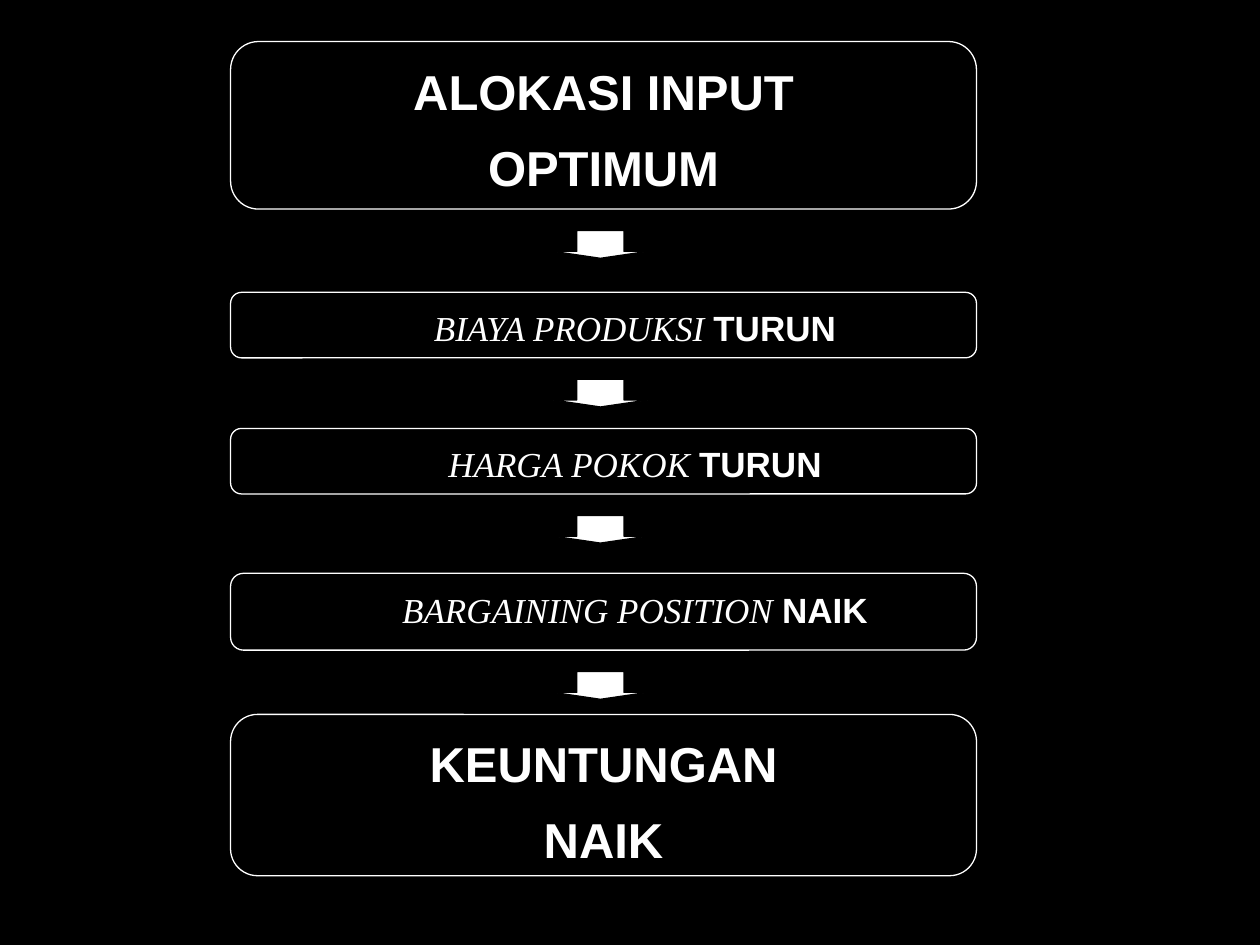
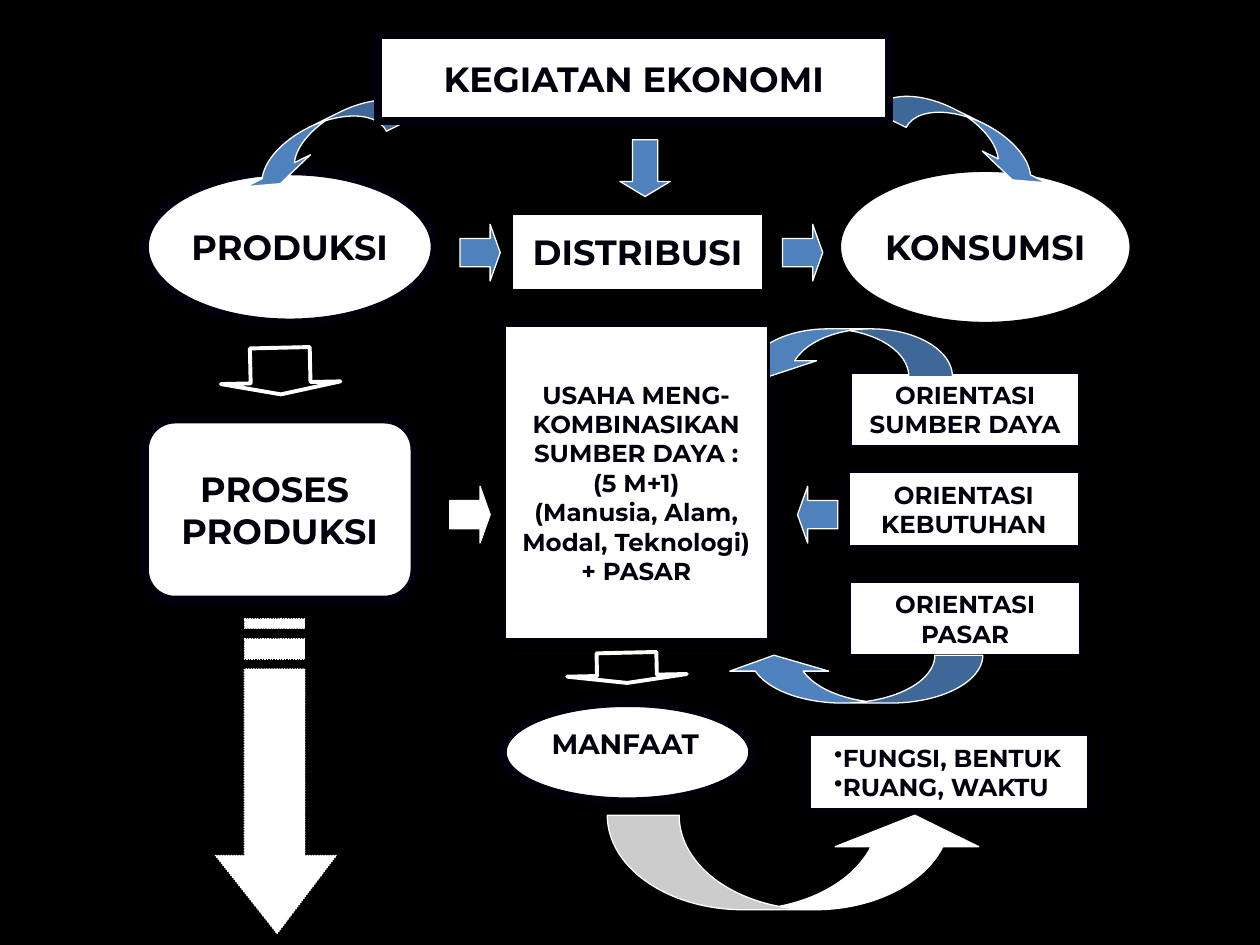
from lxml.etree import SubElement
from pptx import Presentation
from pptx.dml.color import RGBColor
from pptx.enum.dml import MSO_LINE
from pptx.enum.shapes import MSO_SHAPE
from pptx.enum.text import MSO_ANCHOR, PP_ALIGN
from pptx.oxml.ns import qn
from pptx.util import Inches, Pt

BLACK = "000000"
WHITE = "FFFFFF"
INK = "00000C"
BLUE = "4F81BD"
HEADING_FONT = "Montserrat"
BLOCK_HEAD = (0.5, 0.25)


def color(value):
    return RGBColor.from_string(value)


def add_slide(prs):
    s = prs.slides.add_slide(prs.slide_layouts[6])
    s.background.fill.solid()
    s.background.fill.fore_color.rgb = color(BLACK)
    return s


def paint(sp, fill, line, width):
    sp.shadow.inherit = False
    if fill:
        sp.fill.solid()
        sp.fill.fore_color.rgb = color(fill)
    else:
        sp.fill.background()
    sp.line.color.rgb = color(line)
    sp.line.width = Pt(width)


def add_shape(s, kind, box, fill=WHITE, line=WHITE, width=0.75,
              adj=(), rotation=0, flip=False):
    sp = s.shapes.add_shape(kind, *(Inches(v) for v in box))
    paint(sp, fill, line, width)
    for i, value in enumerate(adj):
        sp.adjustments[i] = value
    sp.rotation = rotation
    if flip:
        sp.element.spPr.xfrm.set("flipH", "1")
    return sp


def add_run(p, text, size, font, ink, bold=True, italic=False):
    r = p.add_run()
    r.text = text
    r.font.size = Pt(size)
    r.font.name = font
    r.font.bold = bold
    r.font.italic = italic
    r.font.color.rgb = color(ink)


def paragraphs(tf, count):
    return [tf.paragraphs[0]] + [tf.add_paragraph() for _ in range(count - 1)]


def add_node(s, kind, box, lines, size=14, width=2.25, wrap=True,
             align=PP_ALIGN.CENTER):
    sp = add_shape(s, kind, box, WHITE, INK, width)
    tf = sp.text_frame
    tf.word_wrap = wrap
    tf.vertical_anchor = MSO_ANCHOR.MIDDLE
    for p, line in zip(paragraphs(tf, len(lines)), lines):
        p.alignment = align
        for i, part in enumerate(line.split("\n")):
            if i:
                p.add_line_break()
            add_run(p, part, size, HEADING_FONT, INK)
    return tf


def add_step(s, box):
    sp = add_shape(s, MSO_SHAPE.ROUNDED_RECTANGLE, box, BLACK, WHITE)
    tf = sp.text_frame
    tf.word_wrap = True
    tf.vertical_anchor = MSO_ANCHOR.TOP
    tf.margin_top = Inches(0.09)
    return tf


def add_goal(s, box, lines):
    tf = add_step(s, box)
    for p, line in zip(paragraphs(tf, len(lines)), lines):
        p.alignment = PP_ALIGN.CENTER
        p.space_after = Pt(10)
        add_run(p, line, 28, "Arial", WHITE)


def add_effect(s, box, subject, change):
    p = add_step(s, box).paragraphs[0]
    p.alignment = PP_ALIGN.CENTER
    p.level = 1
    p.space_after = Pt(6)
    pPr = p._p.get_or_add_pPr()
    pPr.set("marL", str(Inches(0.5)))
    pPr.set("indent", "0")
    add_run(p, subject + " ", 20, "Times New Roman", WHITE, False, True)
    add_run(p, change, 20, "Arial", WHITE)


def draw_profit_chain(s, x, y, w):
    add_goal(s, (x, y, w, 1.33), ["ALOKASI INPUT", "OPTIMUM"])
    effects = [
        (1.99, 0.52, "BIAYA PRODUKSI", "TURUN"),
        (3.07, 0.52, "HARGA POKOK", "TURUN"),
        (4.22, 0.61, "BARGAINING POSITION", "NAIK"),
    ]
    bottoms = [1.33]
    for dy, h, subject, change in effects:
        add_effect(s, (x, y + dy, w, h), subject, change)
        bottoms.append(dy + h)
    add_goal(s, (x, y + 5.34, w, 1.28), ["KEUNTUNGAN", "NAIK"])
    for bottom in bottoms:
        add_shape(s, MSO_SHAPE.DOWN_ARROW,
                  (x + 2.56, y + bottom + 0.17, 0.75, 0.22),
                  WHITE, BLACK, adj=BLOCK_HEAD)


def draw_activities(s, x, y):
    for dx, width, label in [(0, 4.5, "PRODUKSI"), (5.52, 0.75, "KONSUMSI")]:
        add_node(s, MSO_SHAPE.OVAL, (x + dx, y, 2.3, 1.2), [label],
                 20, width, False)
    add_node(s, MSO_SHAPE.RECTANGLE, (x + 2.92, y + 0.34, 1.98, 0.6),
             ["DISTRIBUSI"], 20, 0.75, False)
    for dx in (2.5, 5.06):
        add_shape(s, MSO_SHAPE.RIGHT_ARROW, (x + dx, y + 0.42, 0.32, 0.45),
                  BLUE, adj=BLOCK_HEAD)


def draw_header(s, x, y, w):
    for dx, dy, rotation, flip in [(4.53, 0.05, 296.3, False),
                                   (-0.57, 0.08, 63.7, True)]:
        add_shape(s, MSO_SHAPE.CURVED_LEFT_ARROW,
                  (x + dx, y + dy, 0.3, 1.51), BLUE,
                  adj=(0.95, 1.9, 0.333), rotation=rotation, flip=flip)
    add_shape(s, MSO_SHAPE.DOWN_ARROW, (x + 1.92, y + 0.83, 0.4, 0.45),
              BLUE, adj=(0.5, 0.3))
    add_node(s, MSO_SHAPE.RECTANGLE, (x, y, w, 0.68), ["KEGIATAN EKONOMI"],
             20, 4.5, False)


def add_outline_arrow(s, x, y, h):
    add_shape(s, MSO_SHAPE.DOWN_ARROW, (x, y, 0.95, h), None, WHITE, 2.25,
              BLOCK_HEAD, 358.7)


def add_striped_arrow(s, x, y):
    left, right = 0.23, 0.71
    contours = [
        [(0.96, 1.88), (right, 1.88), (right, 0.4), (left, 0.4),
         (left, 1.88), (0, 1.88), (0.49, 2.5)],
        [(right, 0.16), (left, 0.16), (left, 0.32), (right, 0.32)],
        [(right, 0), (left, 0), (left, 0.08), (right, 0.08)],
    ]
    contours = [[(Inches(x + dx), Inches(y + dy)) for dx, dy in points]
                for points in contours]
    builder = s.shapes.build_freeform(*contours[0][0])
    for i, points in enumerate(contours):
        if i:
            builder.move_to(*points[0])
        builder.add_line_segments(points[1:], close=True)
    sp = builder.convert_to_shape()
    paint(sp, WHITE, WHITE, 0.75)
    sp.line.dash_style = MSO_LINE.ROUND_DOT


def draw_production(s, x, y):
    add_outline_arrow(s, x + 0.6, y, 0.37)
    add_node(s, MSO_SHAPE.ROUNDED_RECTANGLE, (x, y + 0.57, 2.14, 1.43),
             ["PROSES ", "PRODUKSI"], 20, 4.5, False)
    add_striped_arrow(s, x + 0.56, y + 2.15)


def draw_orientations(s, x, y):
    boxes = [(0.02, 0, 1.82, "SUMBER DAYA"), (0, 0.79, 1.84, "KEBUTUHAN"),
             (0.01, 1.66, 1.84, "PASAR")]
    for dx, dy, w, topic in boxes:
        add_node(s, MSO_SHAPE.RECTANGLE, (x + dx, y + dy, w, 0.6),
                 ["ORIENTASI " + topic])
    curves = [(MSO_SHAPE.CURVED_DOWN_ARROW, -0.34, 1.81, 0.913, 1.827),
              (MSO_SHAPE.CURVED_UP_ARROW, 2.25, 2.05, 1.033, 2.067)]
    for kind, dy, w, thickness, head in curves:
        add_shape(s, kind, (x - 0.98, y + dy, w, 0.38), BLUE,
                  adj=(thickness, head, 0.333), flip=True)
    add_shape(s, MSO_SHAPE.RIGHT_ARROW, (x - 0.4, y + 0.91, 0.32, 0.45),
              BLUE, adj=BLOCK_HEAD, flip=True)


def draw_resources(s, x, y, w, h):
    add_shape(s, MSO_SHAPE.RIGHT_ARROW, (x - 0.43, y + 1.28, 0.32, 0.45),
              adj=BLOCK_HEAD)
    add_node(s, MSO_SHAPE.RECTANGLE, (x, y, w, h),
             ["USAHA MENG-KOMBINASIKAN SUMBER DAYA :\n(5 M+1)",
              "(Manusia, Alam, Modal, Teknologi)", "+ PASAR"])
    add_outline_arrow(s, x + 0.5, y + h + 0.1, 0.24)


def draw_benefits(s, x, y):
    tf = add_node(s, MSO_SHAPE.OVAL, (x, y, 1.98, 0.78), ["MANFAAT"],
                  16, 4.5, align=PP_ALIGN.LEFT)
    tf.vertical_anchor = MSO_ANCHOR.BOTTOM
    tf.margin_top = Inches(0.2)
    tf.margin_bottom = Inches(0.21)
    tf = add_node(s, MSO_SHAPE.RECTANGLE, (x + 2.43, y + 0.25, 2.22, 0.6),
                  ["FUNGSI, BENTUK", "RUANG, WAKTU"], align=PP_ALIGN.LEFT)
    tf.margin_left = Inches(0.2)
    for p in tf.paragraphs:
        pPr = p._p.get_or_add_pPr()
        pPr.set("marL", "0")
        pPr.set("indent", "0")
        SubElement(pPr, qn("a:buChar")).set("char", "•")
    add_shape(s, MSO_SHAPE.CURVED_UP_ARROW, (x + 0.83, y + 0.89, 3.01, 0.75),
              adj=(0.76, 1.52, 0.333))


def main():
    prs = Presentation()
    prs.slide_width = Inches(10)
    prs.slide_height = Inches(7.5)

    draw_profit_chain(add_slide(prs), 1.83, 0.33, 5.92)

    s = add_slide(prs)
    draw_activities(s, 1.15, 1.36)
    draw_header(s, 3, 0.28, 4.06)
    draw_production(s, 1.15, 2.76)
    draw_orientations(s, 6.73, 2.95)
    draw_resources(s, 4, 2.58, 2.1, 2.5)
    draw_benefits(s, 3.99, 5.58)

    prs.save("out.pptx")


if __name__ == "__main__":
    main()
